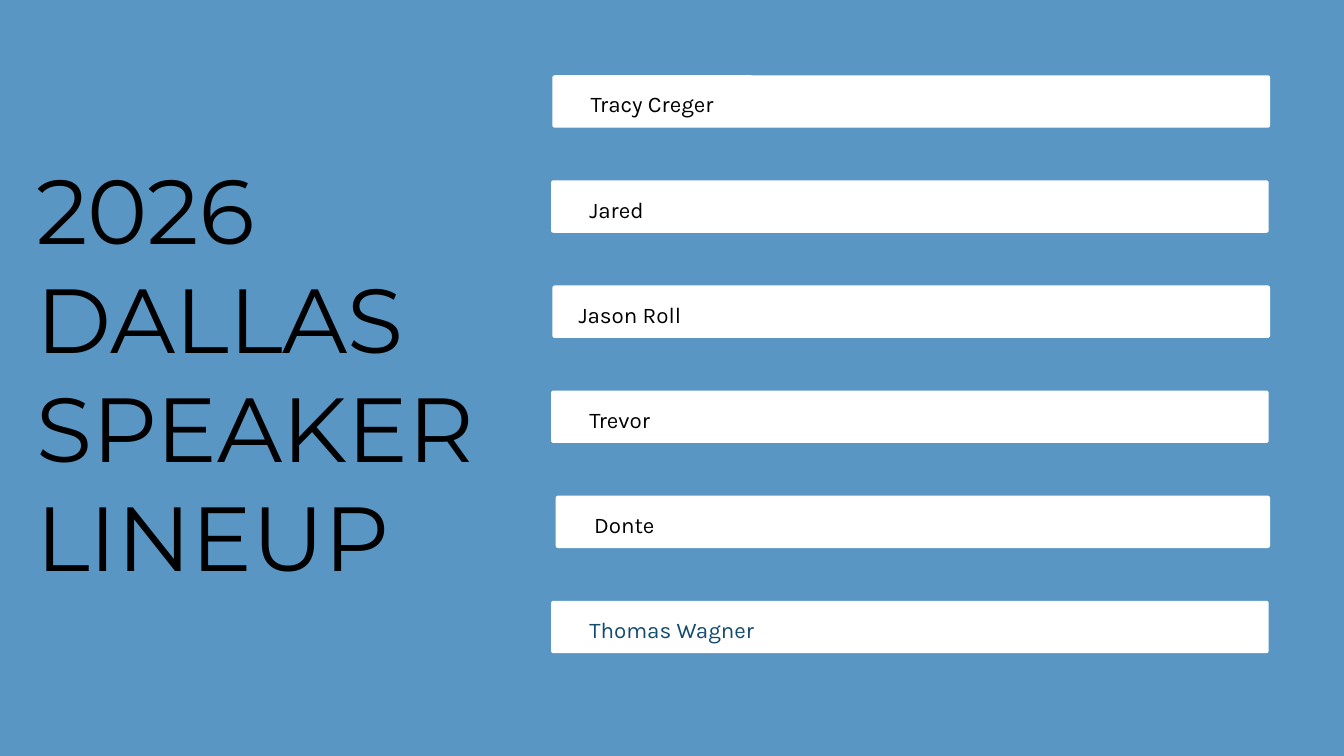
from dataclasses import dataclass

from pptx import Presentation
from pptx.dml.color import RGBColor
from pptx.enum.shapes import MSO_SHAPE
from pptx.enum.text import MSO_ANCHOR, MSO_AUTO_SIZE, PP_ALIGN
from pptx.util import Inches, Pt

SKY = RGBColor(0x5A, 0x96, 0xC3)
NAVY = RGBColor(0x13, 0x4B, 0x70)
WHITE = RGBColor(0xFF, 0xFF, 0xFF)
BLACK = RGBColor(0x00, 0x00, 0x00)

TITLE_ONLY = 5
FIRST_TOP, LAST_TOP = 1.12, 8.94
BAR_HEIGHT = 0.78
CORNER_RADIUS = 0.035
NAME_DROP = 0.16
NAME_HEIGHT = 0.42
NAME_MARGIN = 1.15


@dataclass(frozen=True)
class Speaker:
    name: str
    left: float
    width: float = 10.68
    indent: float = 0.57
    color: RGBColor = BLACK


SPEAKERS = [
    Speaker("Tracy Creger", 8.22),
    Speaker("Jared", 8.2),
    Speaker("Jason Roll", 8.22, indent=0.39),
    Speaker("Trevor", 8.2),
    Speaker("Donte", 8.27, width=10.63),
    Speaker("Thomas Wagner", 8.2, color=NAVY),
]


def set_text(box, text: str, font_name: str, size: float, leading: float,
             color: RGBColor) -> None:
    frame = box.text_frame
    frame.word_wrap = True
    frame.auto_size = MSO_AUTO_SIZE.NONE
    frame.vertical_anchor = MSO_ANCHOR.TOP
    frame.margin_left = frame.margin_right = 0
    frame.margin_top = frame.margin_bottom = 0
    frame.text = text
    for para in frame.paragraphs:
        para.alignment = PP_ALIGN.LEFT
        para.line_spacing = Pt(leading)
        para.space_before = Pt(0)
        for span in para.runs:
            span.font.name = font_name
            span.font.size = Pt(size)
            span.font.color.rgb = color


def add_speaker(page, speaker: Speaker, top: float) -> None:
    bar = page.shapes.add_shape(
        MSO_SHAPE.ROUNDED_RECTANGLE, Inches(speaker.left), Inches(top),
        Inches(speaker.width), Inches(BAR_HEIGHT))
    bar.adjustments[0] = CORNER_RADIUS / BAR_HEIGHT
    bar.shadow.inherit = False
    bar.fill.solid()
    bar.fill.fore_color.rgb = WHITE
    bar.line.fill.background()

    label = page.shapes.add_textbox(
        Inches(speaker.left + speaker.indent), Inches(top + NAME_DROP),
        Inches(speaker.width - NAME_MARGIN), Inches(NAME_HEIGHT))
    set_text(label, speaker.name, "Karla", 24, 33.6, speaker.color)


def add_title(page) -> None:
    title = page.shapes.title
    title.left, title.top = Inches(0.54), Inches(2.29)
    title.width, title.height = Inches(6.58), Inches(6.45)
    set_text(title, "2026\nDALLAS\nSPEAKER LINEUP", "Montserrat", 97.4, 116.8, BLACK)


def main() -> None:
    deck = Presentation()
    deck.slide_width, deck.slide_height = Inches(20), Inches(11.25)
    page = deck.slides.add_slide(deck.slide_layouts[TITLE_ONLY])
    page.background.fill.solid()
    page.background.fill.fore_color.rgb = SKY

    add_title(page)
    pitch = (LAST_TOP - FIRST_TOP) / (len(SPEAKERS) - 1)
    for row, speaker in enumerate(SPEAKERS):
        add_speaker(page, speaker, FIRST_TOP + row * pitch)

    deck.save("out.pptx")


if __name__ == "__main__":
    main()
